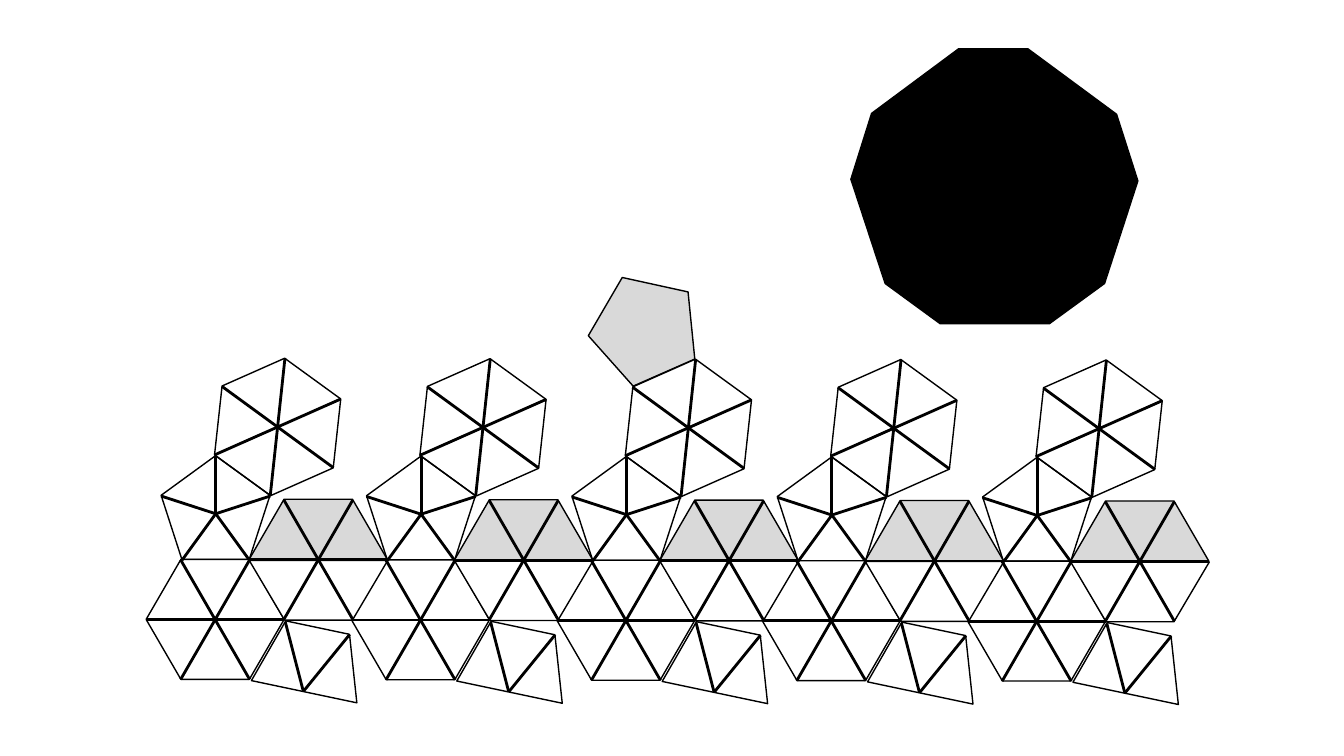
"""Build a slide with a polyhedron net of five repeated units and a black decagon."""
from math import cos, radians, sin

from lxml.etree import SubElement
from pptx import Presentation
from pptx.dml.color import RGBColor
from pptx.enum.shapes import MSO_CONNECTOR as CONN, MSO_SHAPE as SHAPE
from pptx.oxml.ns import qn
from pptx.util import Pt

BLACK = RGBColor(0x00, 0x00, 0x00)
WHITE = RGBColor(0xFF, 0xFF, 0xFF)
GREY = RGBColor(0xD9, 0xD9, 0xD9)

UNITS, PITCH, DROP = 5, 146.7, 0.3
HEXAGON = (SHAPE.HEXAGON, 98.6, 85.7, 0.29)
PENTAGON = (SHAPE.REGULAR_PENTAGON, 77.8, 74.2, None)
HALF = (SHAPE.TRAPEZOID, 99, 42.7, 0.592)
FLAP = (SHAPE.TRAPEZOID, 77, 46.8, 0.325)

CAP = (PENTAGON, 420.5, 195.1, 336.3, GREY)
PIECES = [
    (HEXAGON, 149, 262.1, 156.1, WHITE),
    (HEXAGON, 178, 356.6, 180, GREY),
    (PENTAGON, 115.1, 325.5, 0, None),
    (HEXAGON, 104.4, 399.6, 0, WHITE),
    (HALF, 178, 400.2, 180, WHITE),
    (FLAP, 183.6, 447.8, 11.9, WHITE),
]
HEX_HUBS = [(153.7, 442.6, 0), (198.3, 305, 156.1), (227.4, 399.8, 0)]
HEX_RADIUS = 49.3
PENTAGON_HUB, PENTAGON_RADIUS = (154.1, 367), 41
FLAP_FOLDS = [((203.8, 444.2), (216.7, 493.9)), ((216.7, 493.9), (249.8, 453.2))]
DECAGON = [(684.8, 34.8), (734.2, 34.8), (797.6, 81.6), (812.8, 129.2), (789, 202.5),
           (749.6, 231.2), (671.6, 231.2), (632.3, 202.5), (607.8, 128), (622.6, 81)]


def set_all(obj, values):
    for name, value in values.items():
        setattr(obj, name, value)


def paint(sp, fill):
    sp.shadow.inherit = False
    if fill is None:
        sp.fill.background()
    else:
        sp.fill.solid()
        sp.fill.fore_color.rgb = fill
    sp.line.width = Pt(1)
    sp.line.color.rgb = BLACK


def add_piece(s, piece, dx=0, dy=0):
    (kind, w, h, adj), x, y, turn, fill = piece
    sp = s.shapes.add_shape(kind, Pt(x + dx), Pt(y + dy), Pt(w), Pt(h))
    if adj is not None:
        sp.adjustments[0] = adj
    set_all(sp, {"rotation": turn})
    paint(sp, fill)


def add_fold(s, start, end, dx, dy):
    (x1, y1), (x2, y2) = start, end
    line = s.shapes.add_connector(CONN.STRAIGHT, Pt(x1 + dx), Pt(y1 + dy),
                                  Pt(x2 + dx), Pt(y2 + dy))
    set_all(line.line, {"width": Pt(2)})
    line.line.color.rgb = BLACK
    SubElement(line._element.spPr, qn("a:effectLst"))


def polar(center, radius, angle):
    x, y = center
    return x + radius * cos(radians(angle)), y + radius * sin(radians(angle))


def unit_folds():
    folds = list(FLAP_FOLDS)
    for x, y, turn in HEX_HUBS:
        for angle in range(0, 180, 60):
            folds.append((polar((x, y), HEX_RADIUS, turn + angle),
                          polar((x, y), HEX_RADIUS, turn + angle + 180)))
    for angle in range(-90, 270, 72):
        folds.append((PENTAGON_HUB, polar(PENTAGON_HUB, PENTAGON_RADIUS, angle)))
    return folds


def main():
    prs = Presentation()
    set_all(prs, {"slide_width": Pt(960), "slide_height": Pt(540)})
    s = prs.slides.add_slide(prs.slide_layouts[6])
    corners = [(Pt(x), Pt(y)) for x, y in DECAGON]
    outline = s.shapes.build_freeform(*corners[0])
    outline.add_line_segments(corners[1:], close=True)
    paint(outline.convert_to_shape(), BLACK)

    add_piece(s, CAP)
    shifts = [(i * PITCH, i * DROP) for i in range(UNITS)]
    for piece in PIECES:
        for dx, dy in shifts:
            add_piece(s, piece, dx, dy)
    for start, end in unit_folds():
        for dx, dy in shifts:
            add_fold(s, start, end, dx, dy)
    prs.save("out.pptx")


if __name__ == "__main__":
    main()
